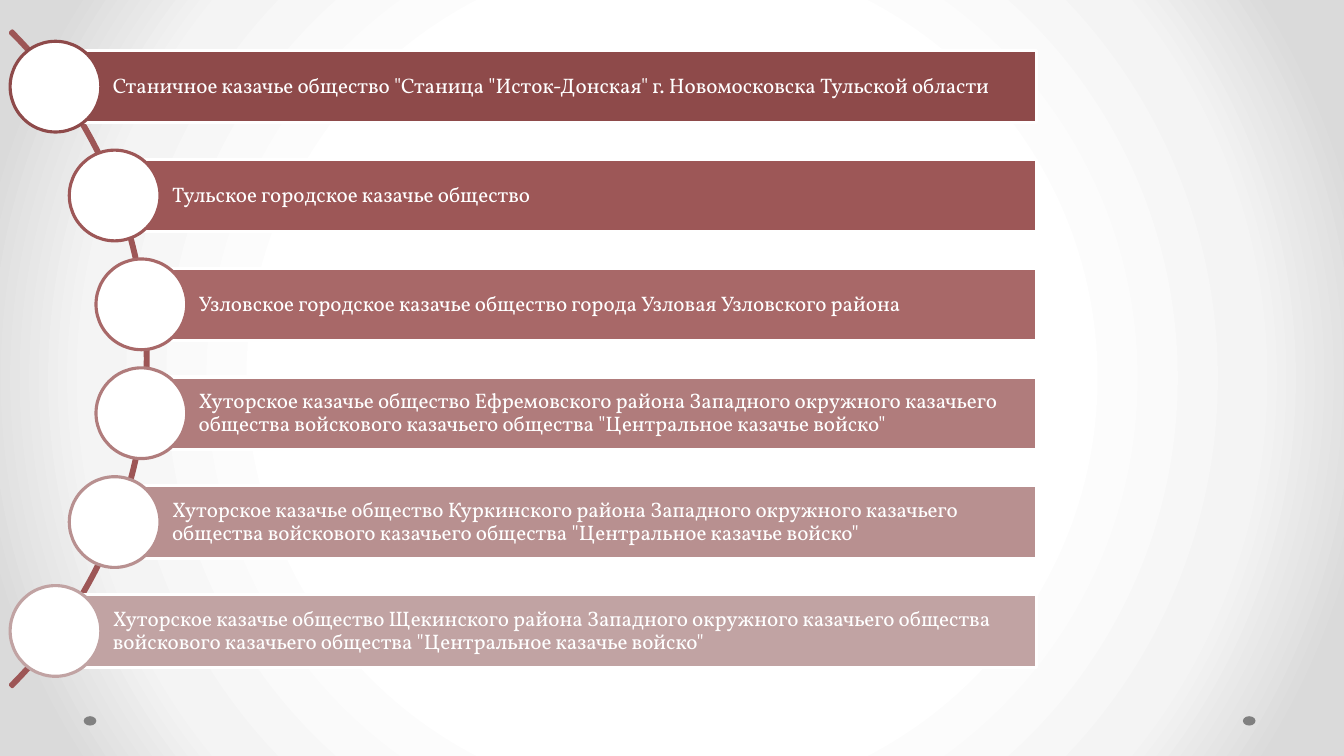
from math import sqrt

from lxml import etree
from pptx import Presentation
from pptx.dml.color import RGBColor
from pptx.enum.shapes import MSO_SHAPE
from pptx.enum.text import MSO_ANCHOR, PP_ALIGN
from pptx.oxml.ns import qn
from pptx.util import Pt

RECTANGLE = MSO_SHAPE.RECTANGLE
OVAL = MSO_SHAPE.OVAL
BLOCK_ARC = MSO_SHAPE.BLOCK_ARC
MIDDLE = MSO_ANCHOR.MIDDLE
LEFT = PP_ALIGN.LEFT

FONT = "Vollkorn"
WHITE = "FFFFFF"
LINE_WIDTH = 2.25

# The circles are centred on a curve around this point
CURVE_X, CURVE_Y = -225.4, 256.3
CURVE_RADIUS = 328.7
ARC_SIZE = 662.4

ROW_STEP = 77.76
BAR_RIGHT, BAR_HEIGHT = 740.2, 51.8
CIRCLE_SIZE = 64.8

BACKGROUND_STOPS = [(50, WHITE), (76, "F4F4F4"), (92, "DADADA")]

SOCIETIES = [
    ("8E4A4A", 'Станичное казачье общество "Станица "Исток-Донская" '
               'г. Новомосковска Тульской области'),
    ("9D5757", 'Тульское городское казачье общество'),
    ("A86868", 'Узловское городское казачье общество города Узловая '
               'Узловского района'),
    ("B07C7C", 'Хуторское казачье общество Ефремовского района Западного окружного '
               'казачьего общества войскового казачьего общества '
               '"Центральное казачье войско"'),
    ("B89090", 'Хуторское казачье общество Куркинского района Западного окружного '
               'казачьего общества войскового казачьего общества '
               '"Центральное казачье войско"'),
    ("C1A3A3", 'Хуторское казачье общество Щекинского района Западного окружного '
               'казачьего общества войскового казачьего общества '
               '"Центральное казачье войско"'),
]


def color(value):
    return RGBColor.from_string(value)


def set_background(slide):
    fill = slide.background.fill
    fill.gradient()
    gradient = slide.background._cSld.find(".//" + qn("a:gradFill"))
    for child in list(gradient):
        gradient.remove(child)
    stops = etree.SubElement(gradient, qn("a:gsLst"))
    for position, value in BACKGROUND_STOPS:
        stop = etree.SubElement(stops, qn("a:gs"), pos=str(position * 1000))
        etree.SubElement(stop, qn("a:srgbClr"), val=value)
    circle = etree.SubElement(gradient, qn("a:path"), path="circle")
    etree.SubElement(circle, qn("a:fillToRect"),
                     l="50000", t="50000", r="50000", b="50000")


def add_figure(slide, kind, left, top, width, height, fill=None, line=None):
    shape = slide.shapes.add_shape(kind, Pt(left), Pt(top), Pt(width), Pt(height))
    shape.shadow.inherit = False
    if fill:
        shape.fill.solid()
        shape.fill.fore_color.rgb = color(fill)
    else:
        shape.fill.background()
    if line:
        shape.line.color.rgb = color(line)
        shape.line.width = Pt(LINE_WIDTH)
    else:
        shape.line.fill.background()
    return shape


def add_arc(slide):
    arc = add_figure(slide, BLOCK_ARC, CURVE_X - ARC_SIZE / 2, CURVE_Y - ARC_SIZE / 2,
                     ARC_SIZE, ARC_SIZE, line="9D5656")
    # Start angle, end angle and thickness
    for index, value in enumerate((189, 27, 0.003)):
        arc.adjustments[index] = value


def write_label(shape, text):
    frame = shape.text_frame
    frame.word_wrap = True
    frame.vertical_anchor = MIDDLE
    frame.margin_left = Pt(41)
    frame.margin_top = frame.margin_right = frame.margin_bottom = Pt(2.9)
    frame.text = text
    paragraph = frame.paragraphs[0]
    paragraph.alignment = LEFT
    paragraph.line_spacing = 0.9
    font = paragraph.runs[0].font
    font.name = FONT
    font.size = Pt(15)
    font.color.rgb = color(WHITE)


def add_society(slide, row, shade, text):
    offset = (row - (len(SOCIETIES) - 1) / 2) * ROW_STEP
    x = CURVE_X + sqrt(CURVE_RADIUS ** 2 - offset ** 2)
    y = CURVE_Y + offset
    bar = add_figure(slide, RECTANGLE, x, y - BAR_HEIGHT / 2,
                     BAR_RIGHT - x, BAR_HEIGHT, shade, WHITE)
    write_label(bar, text)
    add_figure(slide, OVAL, x - CIRCLE_SIZE / 2, y - CIRCLE_SIZE / 2,
               CIRCLE_SIZE, CIRCLE_SIZE, WHITE, shade)


def main():
    presentation = Presentation()
    presentation.slide_width = Pt(960)
    presentation.slide_height = Pt(540)
    slide = presentation.slides.add_slide(presentation.slide_layouts[6])
    set_background(slide)

    # Footer dots
    for left in (887.8, 59.8):
        add_figure(slide, OVAL, left, 511.6, 9, 6.7, fill="808080")

    # Curved list
    add_arc(slide)
    for row, (shade, text) in enumerate(SOCIETIES):
        add_society(slide, row, shade, text)

    presentation.save("out.pptx")


if __name__ == "__main__":
    main()
